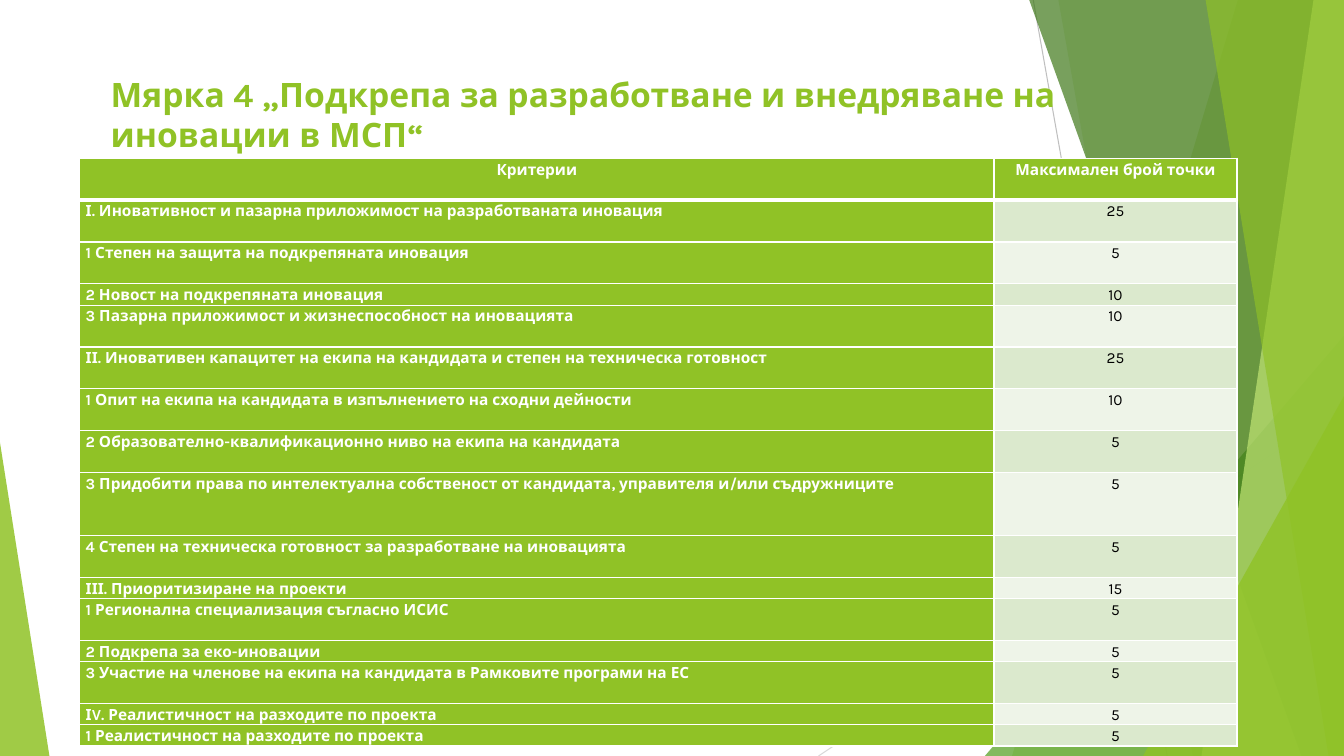
from lxml.etree import SubElement
from pptx import Presentation
from pptx.dml.color import RGBColor
from pptx.enum.shapes import MSO_CONNECTOR as CONNECTOR, MSO_SHAPE as SHAPE
from pptx.enum.text import MSO_ANCHOR as ANCHOR, PP_ALIGN as ALIGN
from pptx.oxml.ns import qn
from pptx.util import Inches, Pt

WIDTH, HEIGHT = Inches(13.33), Inches(7.5)
FONT = "Karla"
WHITE = RGBColor(0xFF, 0xFF, 0xFF)
BLACK = RGBColor(0x00, 0x00, 0x00)
GREEN = RGBColor(0x90, 0xC2, 0x26)
MID_GREEN = RGBColor(0x54, 0xA0, 0x21)
DARK_GREEN = RGBColor(0x3F, 0x78, 0x19)
LIGHT_GREEN = RGBColor(0xC0, 0xE4, 0x74)
BAND_DARK = RGBColor(0xDB, 0xE9, 0xCD)
BAND_LIGHT = RGBColor(0xEE, 0xF4, 0xE8)
GREY = RGBColor(0xBF, 0xBF, 0xBF)
PALE_GREY = RGBColor(0xD9, 0xD9, 0xD9)

TITLE = "Мярка 4 „Подкрепа за разработване и внедряване на иновации в МСП“"
CRITERIA = [
    ("Критерии", "Максимален брой точки", 2),
    ("І. Иновативност и пазарна приложимост на разработваната иновация", "25", 2),
    ("1 Степен на защита на подкрепяната иновация", "5", 2),
    ("2 Новост на подкрепяната иновация", "10", 1),
    ("3 Пазарна приложимост и жизнеспособност на иновацията", "10", 2),
    ("ІІ. Иновативен капацитет на екипа на кандидата и степен на техническа готовност", "25", 2),
    ("1 Опит на екипа на кандидата в изпълнението на сходни дейности", "10", 2),
    ("2 Образователно-квалификационно ниво на екипа на кандидата", "5", 2),
    ("3 Придобити права по интелектуална собственост от кандидата, "
     "управителя и/или съдружниците", "5", 3),
    ("4 Степен на техническа готовност за разработване на иновацията", "5", 2),
    ("ІІІ. Приоритизиране на проекти", "15", 1),
    ("1 Регионална специализация съгласно ИСИС", "5", 2),
    ("2 Подкрепа за еко-иновации", "5", 1),
    ("3 Участие на членове на екипа на кандидата в Рамковите програми на ЕС", "5", 2),
    ("ІV. Реалистичност на разходите по проекта", "5", 1),
    ("1 Реалистичност на разходите по проекта", "5", 1),
]
COLUMN_SHARES = (68.03, 18.08)
ROW_LINE_SHARE = 2.77


def across(percent):
    """Turn a percentage of the slide width into a length."""
    return round(WIDTH * percent / 100)


def down(percent):
    """Turn a percentage of the slide height into a length."""
    return round(HEIGHT * percent / 100)


def tint(shape, color, opacity):
    """Fill a shape with a translucent colour, without line or shadow."""
    shape.shadow.inherit = False
    shape.line.fill.background()
    shape.fill.solid()
    shape.fill.fore_color.rgb = color
    color_node = shape.fill._xPr.find(qn("a:solidFill"))[0]
    SubElement(color_node, qn("a:alpha"), val=str(opacity * 1000))


def add_ray(slide, start, end, color):
    """Draw a thin background line between two points."""
    ray = slide.shapes.add_connector(
        CONNECTOR.STRAIGHT, across(start[0]), down(start[1]), across(end[0]), down(end[1]))
    ray.line.color.rgb = color
    ray.line.width = Pt(0.75)
    SubElement(ray._element.spPr, qn("a:effectLst"))


def add_facet(slide, top_x, bottom_x, color, opacity):
    """Draw a full-height facet that reaches the right edge of the slide."""
    outline = slide.shapes.build_freeform(across(top_x), 0)
    outline.add_line_segments([(WIDTH, 0), (WIDTH, HEIGHT), (across(bottom_x), HEIGHT)])
    tint(outline.convert_to_shape(), color, opacity)


def add_corner(slide, left, right, top, apex, color, opacity):
    """Draw a triangle standing on the bottom edge of the slide."""
    corner = slide.shapes.add_shape(
        SHAPE.ISOSCELES_TRIANGLE, across(left), down(top), across(right - left), down(100 - top))
    corner.adjustments[0] = apex
    tint(corner, color, opacity)


def add_backdrop(slide):
    """Draw the rays, facets and corners from back to front."""
    add_ray(slide, (76.88, 0), (86.85, 100), GREY)
    add_ray(slide, (100, 53.73), (60.9, 100), PALE_GREY)
    add_facet(slide, 92.1, 75.3, GREEN, 30)
    add_facet(slide, 78.75, 88.73, GREEN, 20)
    add_corner(slide, 73.28, 100, 44.4, 1, MID_GREEN, 72)
    add_facet(slide, 76.58, 96.83, DARK_GREEN, 70)
    add_facet(slide, 97.73, 89.4, LIGHT_GREEN, 70)
    add_facet(slide, 89.7, 98.85, GREEN, 65)
    add_corner(slide, 85.05, 100, 52.4, 1, GREEN, 80)
    add_corner(slide, 0, 3.68, 58.53, 0, GREEN, 85)


def style_font(font, size, color, bold):
    """Apply the slide's typeface with the given look."""
    font.name, font.size, font.bold = FONT, Pt(size), bold
    font.color.rgb = color


def add_title(slide):
    """Place the heading above the table."""
    heading = slide.shapes.add_textbox(across(7.5), down(9.07), across(76.05), down(15.33))
    frame = heading.text_frame
    frame.word_wrap = True
    frame.vertical_anchor = ANCHOR.TOP
    frame.text = TITLE
    style_font(frame.paragraphs[0].runs[0].font, 24, GREEN, True)


def add_borders(cell, weights):
    """Give a cell white borders, with weights in points by side."""
    properties = cell._tc.get_or_add_tcPr()
    for side, weight in weights.items():
        border = SubElement(properties, qn(f"a:ln{side}"), w=str(Pt(weight)))
        fill = SubElement(border, qn("a:solidFill"))
        SubElement(fill, qn("a:srgbClr"), val=str(WHITE))


def fill_cell(cell, text, fill, color, bold, align, weights):
    """Write and format one table cell."""
    cell.margin_left = cell.margin_right = Inches(0.06)
    cell.margin_top = cell.margin_bottom = 0
    add_borders(cell, weights)
    cell.fill.solid()
    cell.fill.fore_color.rgb = fill
    cell.text_frame.text = text
    paragraph = cell.text_frame.paragraphs[0]
    paragraph.alignment = align
    paragraph.line_spacing = 1.15
    style_font(paragraph.runs[0].font, 11, color, bold)


def add_criteria_table(slide):
    """Build the table of criteria and their maximum points."""
    line_count = sum(lines for _, _, lines in CRITERIA)
    table = slide.shapes.add_table(
        len(CRITERIA), len(COLUMN_SHARES), across(5.93), down(20.93),
        across(sum(COLUMN_SHARES)), down(line_count * ROW_LINE_SHARE)).table
    table.horz_banding = False
    for column, share in zip(table.columns, COLUMN_SHARES):
        column.width = across(share)
    for index, (criterion, points, lines) in enumerate(CRITERIA):
        is_header = index == 0
        table.rows[index].height = down(lines * ROW_LINE_SHARE)
        weights = {"L": 1, "R": 1, "T": 3 if index == 1 else 1, "B": 3 if is_header else 1}
        band = BAND_DARK if index % 2 else BAND_LIGHT
        fill_cell(table.cell(index, 0), criterion, GREEN, WHITE, True,
                  ALIGN.CENTER if is_header else ALIGN.LEFT, weights)
        fill_cell(table.cell(index, 1), points, GREEN if is_header else band,
                  WHITE if is_header else BLACK, is_header, ALIGN.CENTER, weights)


def main():
    """Build the slide and save it."""
    deck = Presentation()
    deck.slide_width, deck.slide_height = WIDTH, HEIGHT
    slide = deck.slides.add_slide(deck.slide_layouts[6])
    add_backdrop(slide)
    add_title(slide)
    add_criteria_table(slide)
    deck.save("out.pptx")


if __name__ == "__main__":
    main()
